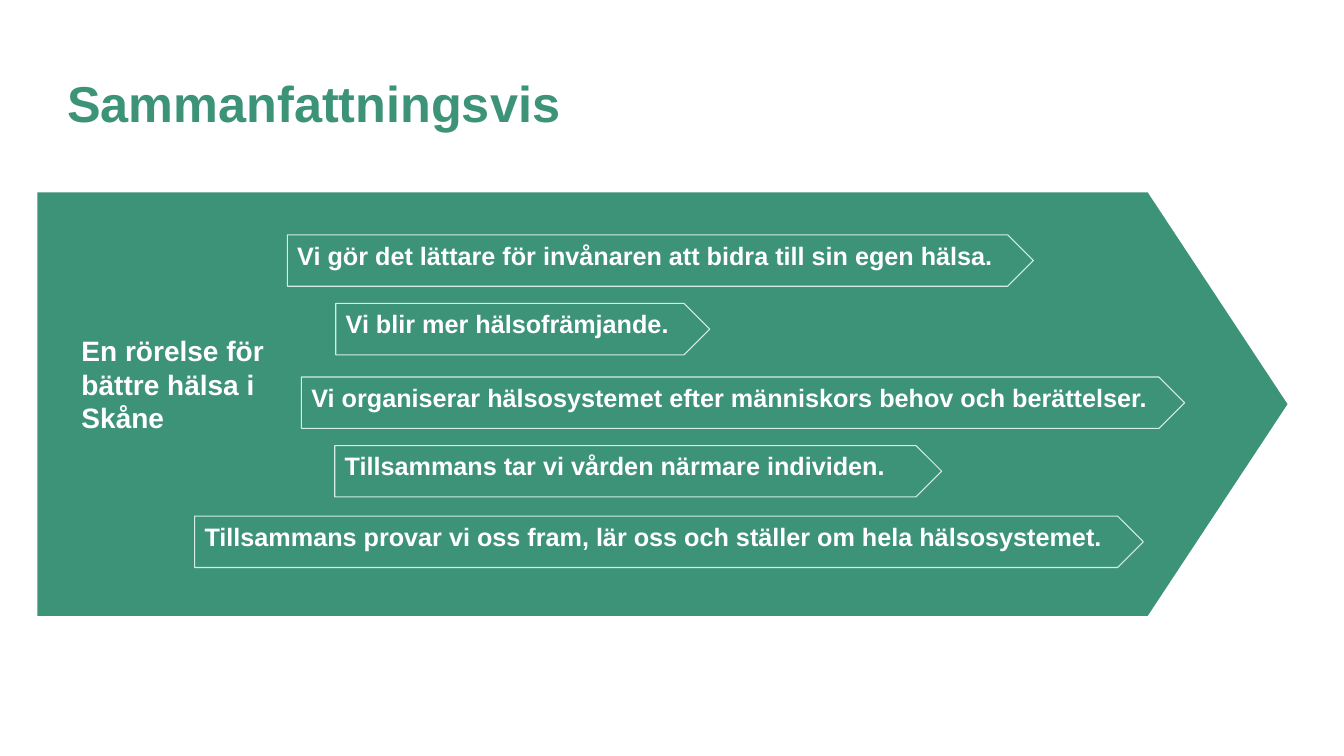
from pptx import Presentation
from pptx.dml.color import RGBColor
from pptx.enum.shapes import MSO_SHAPE as Shape
from pptx.enum.text import MSO_ANCHOR as Anchor, PP_ALIGN as Align
from pptx.util import Pt

PX = 9144  # EMU per px, 100 px to the inch
GREEN, PALE_GREEN, WHITE = "3D9378", "D4EDE5", "FFFFFF"


def color(hex_value):
    return RGBColor.from_string(hex_value)


def write(shape, text, size=18, ink=WHITE):
    frame = shape.text_frame
    frame.word_wrap = True
    frame.vertical_anchor = Anchor.TOP
    paragraph = frame.paragraphs[0]
    paragraph.alignment = Align.LEFT
    run = paragraph.add_run()
    run.text = text
    run.font.name = "Arial"
    run.font.size = Pt(size)
    run.font.bold = True
    run.font.color.rgb = color(ink)


prs = Presentation()
prs.slide_width = 1333 * PX
prs.slide_height = 750 * PX
shapes = prs.slides.add_slide(prs.slide_layouts[6]).shapes

# Large arrow for the movement as a whole
movement = shapes.add_shape(Shape.PENTAGON, 37 * PX, 191 * PX, 1240 * PX, 420 * PX)
movement.adjustments[0] = 0.33
movement.shadow.inherit = False
movement.fill.solid()
movement.fill.fore_color.rgb = color(GREEN)
movement.line.fill.background()

# Commitments: left, top, width, wording
commitments = [
    (285, 233, 740, "Vi gör det lättare för invånaren att bidra till sin egen hälsa."),
    (333, 301, 371, "Vi blir mer hälsofrämjande."),
    (299, 374, 876, "Vi organiserar hälsosystemet efter människors behov och berättelser."),
    (332, 442, 602, "Tillsammans tar vi vården närmare individen."),
    (193, 512, 941, "Tillsammans provar vi oss fram, lär oss och ställer om hela hälsosystemet."),
]
for left, top, width, wording in commitments:
    commitment = shapes.add_shape(Shape.PENTAGON, left * PX, top * PX, width * PX, 51 * PX)
    commitment.shadow.inherit = False
    commitment.fill.solid()
    commitment.fill.fore_color.rgb = color(GREEN)
    commitment.line.color.rgb = color(PALE_GREEN)
    commitment.line.width = Pt(0.75)
    write(commitment, wording)

vision = shapes.add_textbox(71 * PX, 326 * PX, 238 * PX, 111 * PX)
write(vision, "En rörelse för bättre hälsa i Skåne", size=20)

title = shapes.add_textbox(57 * PX, 67 * PX, 680 * PX, 71 * PX)
write(title, "Sammanfattningsvis", size=36, ink=GREEN)

prs.save("out.pptx")
